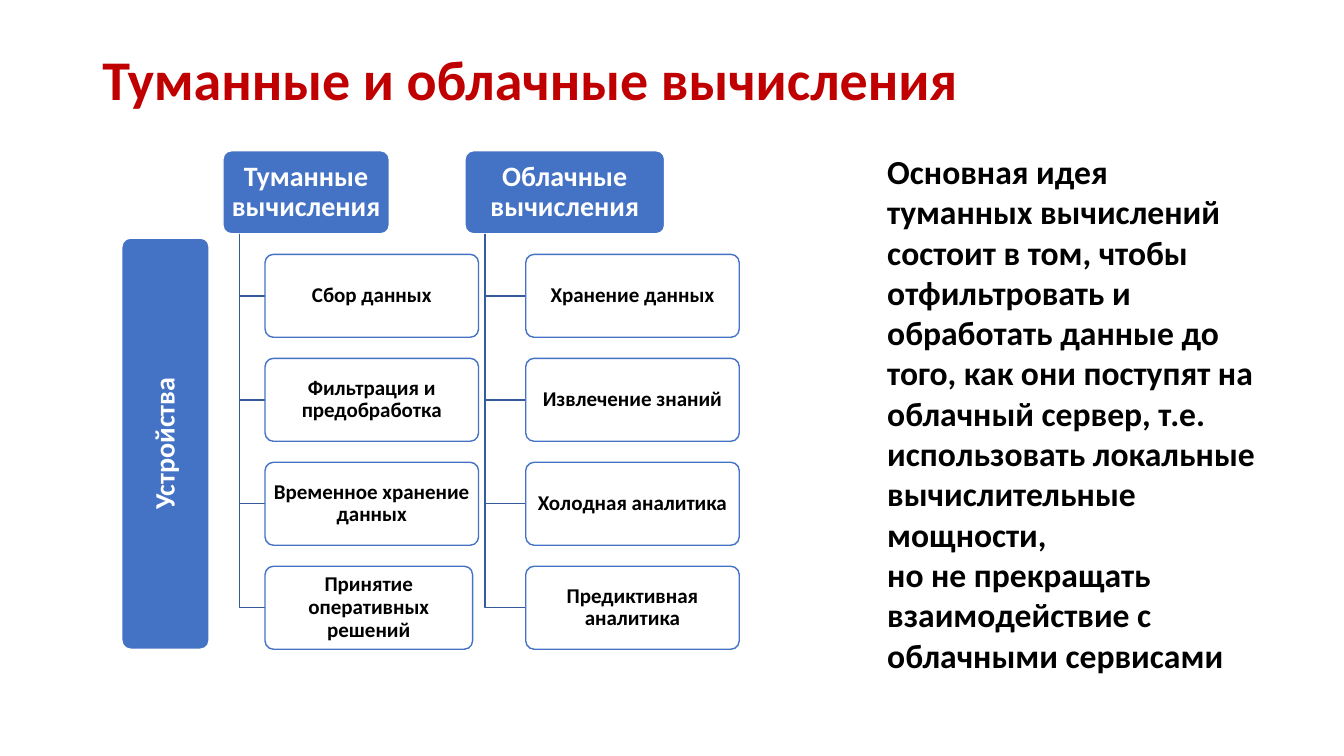
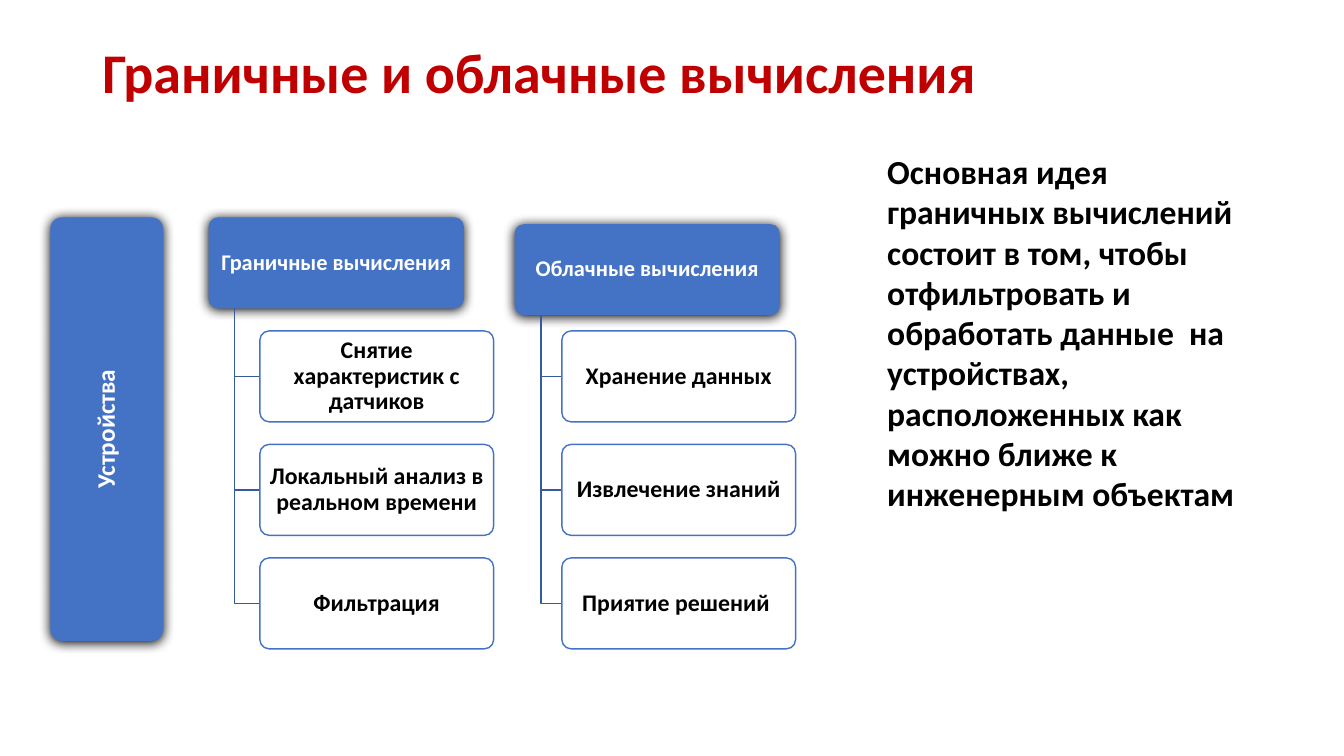
"""Build two slides that set fog and edge computing against cloud computing."""
from lxml import etree
from pptx import Presentation
from pptx.dml.color import RGBColor
from pptx.enum.shapes import MSO_SHAPE
from pptx.enum.text import MSO_ANCHOR, MSO_AUTO_SIZE, PP_ALIGN
from pptx.oxml.ns import qn
from pptx.util import Cm, Pt

ROUND = MSO_SHAPE.ROUNDED_RECTANGLE
TOP, MIDDLE = MSO_ANCHOR.TOP, MSO_ANCHOR.MIDDLE
LEFT, CENTER = PP_ALIGN.LEFT, PP_ALIGN.CENTER
GROW = MSO_AUTO_SIZE.SHAPE_TO_FIT_TEXT
FONT = "Calibri"
RED, BLUE, DARK_BLUE, WHITE, BLACK = "C00000", "4472C4", "365B9D", "FFFFFF", "000000"

rgb = RGBColor.from_string


def write(sp, text, size, color=BLACK, align=LEFT, anchor=TOP, spacing=1.0, inset=(0.25, 0.13)):
    """Fill a shape with bold text, one paragraph a line."""
    tf = sp.text_frame
    tf.word_wrap = True
    tf.vertical_anchor = anchor
    tf.margin_left = tf.margin_right = Cm(inset[0])
    tf.margin_top = tf.margin_bottom = Cm(inset[1])
    for i, line in enumerate(text.split("\n")):
        p = tf.add_paragraph() if i else tf.paragraphs[0]
        p.alignment, p.line_spacing = align, spacing
        r = p.add_run()
        r.text = line
        r.font.name, r.font.size, r.font.bold = FONT, Pt(size), True
        r.font.color.rgb = rgb(color)
    return tf


def box(s, at, text, size, fill=BLUE, line=WHITE, color=WHITE, inset=(0.1, 0.08), shadow=False, alpha=100):
    """Add a rounded box with centred text."""
    sp = s.shapes.add_shape(ROUND, *map(Cm, at))
    sp.adjustments[0] = 0.1
    sp.shadow.inherit = False
    sp.fill.solid()
    sp.fill.fore_color.rgb = rgb(fill)
    if alpha < 100:
        clr = sp.element.spPr.find(qn("a:solidFill"))[0]
        etree.SubElement(clr, qn("a:alpha"), val=str(alpha * 1000))
    if shadow:
        sp.line.fill.background()
        effects = sp.element.spPr.find(qn("a:effectLst"))
        outer = etree.SubElement(effects, qn("a:outerShdw"), blurRad=str(Pt(8.5)),
                                 dist=str(Pt(1)), dir="5400000", rotWithShape="0")
        etree.SubElement(outer, qn("a:srgbClr"), val=BLACK)
    else:
        sp.line.color.rgb = rgb(line)
        sp.line.width = Pt(1)
    write(sp, text, size, color, CENTER, MIDDLE, 0.9, inset)
    return sp


SLIDES = [
    dict(
        title="Туманные и облачные вычисления", title_top=0.23,
        idea="Основная идея туманных вычислений состоит в том, чтобы отфильтровать и обработать "
             "данные до того, как они поступят на облачный сервер, т.е. использовать локальные "
             "вычислительные мощности,\nно не прекращать взаимодействие с облачными сервисами",
        idea_height=13.59, shadow=False,
        devices=(3.07, 6, 2.2, 10.36), devices_size=20,
        head_size=20, item_size=15, item_inset=(0.08, 0.05),
        first_top=6.41, pitch=2.62, item_width=5.38, height=2.09,
        columns=[
            ("Туманные вычисления", 5.62, 3.8, 4.19, 6.68,
             ["Сбор данных", "Фильтрация и предобработка", "Временное хранение данных",
              "Принятие оперативных решений"], 5.23),
            ("Облачные вычисления", 11.72, 3.8, 5.03, 13.25,
             ["Хранение данных", "Извлечение знаний", "Холодная аналитика",
              "Предиктивная аналитика"], 5.38),
        ],
    ),
    dict(
        title="Граничные и облачные вычисления", title_top=0.05,
        idea="Основная идея граничных вычислений состоит в том, чтобы отфильтровать и обработать "
             "данные  на устройствах, расположенных как можно ближе к инженерным объектам",
        idea_height=9.5, shadow=True,
        devices=(1.27, 5.48, 2.84, 10.67), devices_size=18,
        head_size=16, item_size=17, item_inset=(0.1, 0.05),
        first_top=8.34, pitch=2.86, item_width=5.89, height=2.29,
        columns=[
            ("Граничные вычисления", 5.26, 5.48, 6.43, 6.55,
             ["Снятие характеристик с датчиков", "Локальный анализ в реальном времени",
              "Фильтрация"], 5.89),
            ("Облачные вычисления", 12.97, 5.65, 6.68, 14.16,
             ["Хранение данных", "Извлечение знаний", "Приятие решений "], 5.89),
        ],
    ),
]

prs = Presentation()
prs.slide_width, prs.slide_height = Cm(33.87), Cm(19.05)

for d in SLIDES:
    s = prs.slides.add_slide(prs.slide_layouts[6])
    title = s.shapes.add_textbox(Cm(2.33), Cm(d["title_top"]), Cm(29.21), Cm(3.68))
    write(title, d["title"], 40, RED, anchor=MIDDLE, spacing=0.9)
    idea = s.shapes.add_textbox(Cm(22.11), Cm(3.67), Cm(9.88), Cm(d["idea_height"]))
    write(idea, d["idea"], 24).auto_size = GROW

    devices = box(s, d["devices"], "Устройства", d["devices_size"], shadow=d["shadow"])
    devices.element.txBody.bodyPr.set("vert", "vert270")

    height = d["height"]
    for head, left, top, width, item_left, items, last_width in d["columns"]:
        box(s, (left, top, width, height), head, d["head_size"], shadow=d["shadow"])
        trunk_x = left + width / 10
        for i, item in enumerate(items):
            item_top = d["first_top"] + i * d["pitch"]
            item_width = last_width if item == items[-1] else d["item_width"]
            y = item_top + height / 2
            outline = s.shapes.build_freeform(Cm(trunk_x), Cm(top + height))
            outline.add_line_segments([(Cm(trunk_x), Cm(y)), (Cm(item_left), Cm(y))], close=False)
            elbow = outline.convert_to_shape()
            elbow.shadow.inherit = False
            elbow.fill.background()
            elbow.line.color.rgb = rgb(DARK_BLUE)
            elbow.line.width = Pt(1)
            box(s, (item_left, item_top, item_width, height), item, d["item_size"],
                fill=WHITE, line=BLUE, color=BLACK, inset=d["item_inset"], alpha=90)

prs.save("out.pptx")
